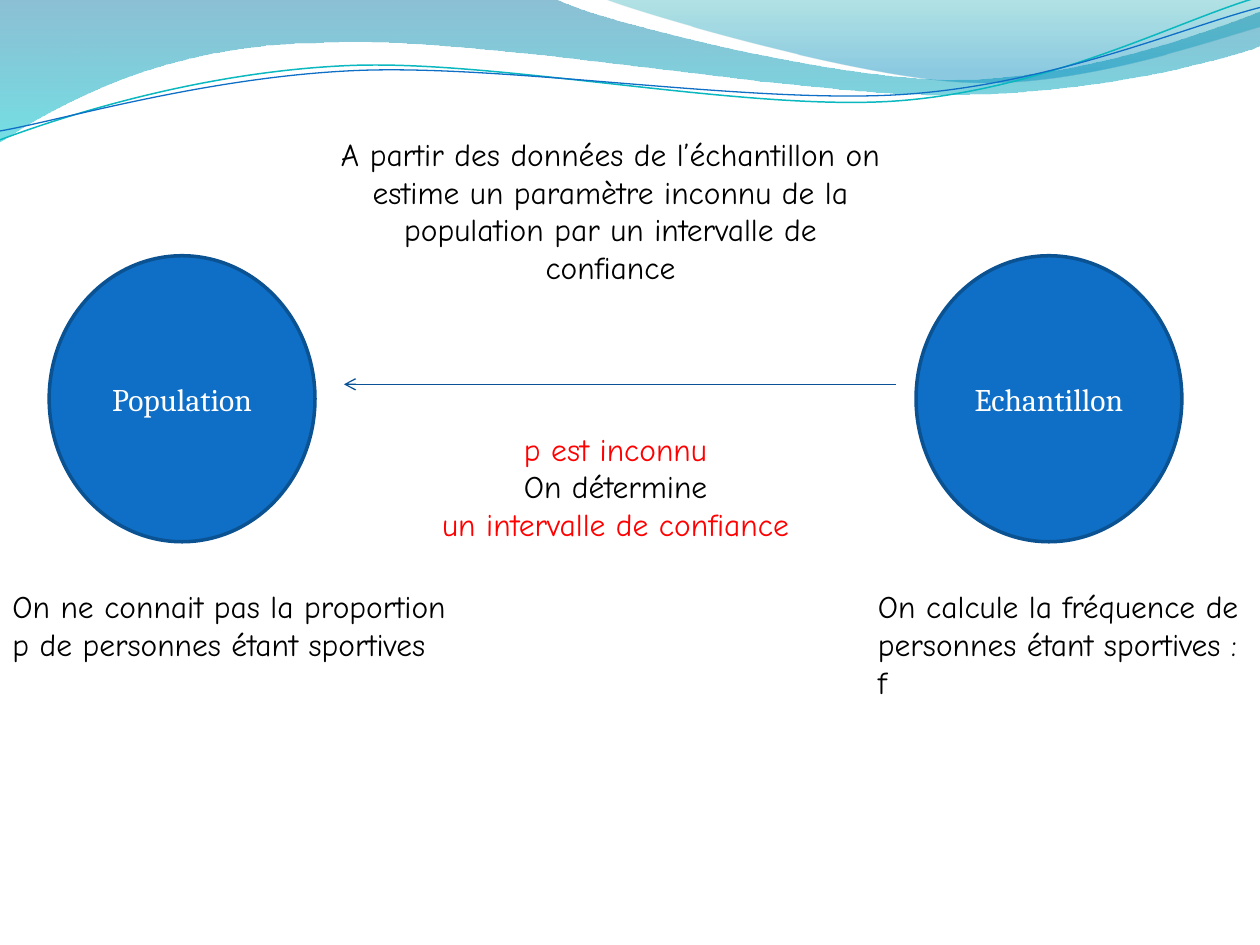
"""Build the slide on estimating a population proportion from a sample."""
from itertools import chain
from math import cos, radians, sin
from lxml.etree import SubElement
from pptx import Presentation
from pptx.dml.color import RGBColor
from pptx.enum.shapes import MSO_CONNECTOR, MSO_SHAPE
from pptx.enum.text import MSO_ANCHOR, MSO_AUTO_SIZE, PP_ALIGN
from pptx.oxml.ns import qn
from pptx.util import Inches, Pt

COLORS = {k: RGBColor.from_string(v) for k, v in {
    "blue": "0F6FC6", "outline": "0B5292", "arrow": "095295", "teal": "0AB8BF",
    "white": "FFFFFF", "black": "000000", "red": "FF0000",
    "wave_top": "0074A1", "wave_end": "00C6CF",
    "crest_top": "00A1A9", "crest_end": "008BBF"}.items()}


def add_wave(shapes, start, segments, close, tilt=0, center=(0, 0)):
    cx, cy = center
    c, n = cos(radians(tilt)), sin(radians(tilt))
    flat = list(chain(start, *segments))
    points = [(Inches(cx + (x - cx) * c + (y - cy) * n),
               Inches(cy - (x - cx) * n + (y - cy) * c))
              for x, y in zip(flat[::2], flat[1::2])]
    builder = shapes.build_freeform(*points[0])
    builder.add_line_segments(points[1:], close=close)
    sp = builder.convert_to_shape()
    sp.shadow.inherit = False
    sp.rotation = tilt
    steps = iter(list(sp._element.spPr.iter(qn("a:lnTo"))))
    for seg in segments:
        first = next(steps)
        if len(seg) == 6:
            first.tag = qn("a:cubicBezTo")
            for step in (next(steps), next(steps)):
                first.append(step[0])
                step.getparent().remove(step)
    return sp


def add_paragraph(tf, index, text, font, color, align):
    p = tf.paragraphs[0] if index == 0 else tf.add_paragraph()
    p.alignment = align
    r = p.add_run()
    r.text = text
    for name, value in {"name": font, "size": Pt(18)}.items():
        setattr(r.font, name, value)
    r.font.color.rgb = COLORS[color]


prs = Presentation()
prs.slide_width, prs.slide_height = Inches(10), Inches(7.5)
s = prs.slides.add_slide(prs.slide_layouts[6])

bands = [
    ((0, -0.01),
     [(4.4, -0.01), (4.76, 0.17, 6.64, 0.63, 7.58, 0.63),
      (8.53, 0.63, 9.58, 0.26, 10, 0.09), (10.01, 0.36),
      (9.83, 0.44, 8.7, 0.76, 7.46, 0.75), (6.22, 0.75, 3.82, 0.28, 2.57, 0.34),
      (1.29, 0.35, 0.46, 0.83, -0.01, 1.13), (0, -0.01)],
     [("wave_top", 0, 45), ("wave_end", 1, 55)]),
    ((4.79, -0.01),
     [(5.09, 0.11, 6.82, 0.62, 7.69, 0.65), (8.56, 0.69, 9.61, 0.32, 10, 0.21),
      (10, 0), (4.79, -0.01)],
     [("crest_top", 0, 30), ("crest_end", 0.8, 45)]),
]
for start, segments, stops in bands:
    sp = add_wave(s.shapes, start, segments, True)
    sp.line.fill.background()
    sp.fill.gradient()
    sp.fill.gradient_angle = 270
    for stop, (color, position, _) in zip(sp.fill.gradient_stops, stops):
        stop.color.rgb = COLORS[color]
        stop.position = position
    for clr, (_, _, opacity) in zip(sp._element.spPr.iter(qn("a:srgbClr")), stops):
        SubElement(clr, qn("a:alpha"), val=str(opacity * 1000))

strokes = [
    ((0, 1.11),
     [(0.48, 0.93, 1.58, 0.57, 2.77, 0.52), (3.95, 0.47, 5.93, 0.89, 7.13, 0.8),
      (8.33, 0.71, 9.38, 0.15, 9.98, -0.02)], (4.99, 0.58), "teal", 0.85),
    ((0, 1.04),
     [(0.47, 0.96, 1.64, 0.61, 2.83, 0.56), (4.03, 0.51, 5.97, 0.83, 7.17, 0.75),
      (8.36, 0.67, 9.41, 0.21, 10, 0.06)], (5, 0.59), "blue", 0.75),
]
for start, segments, center, color, width in strokes:
    sp = add_wave(s.shapes, start, segments, False, 357.3, center)
    sp.fill.background()
    sp.line.color.rgb = COLORS[color]
    sp.line.width = Pt(width)

for left, label in [(0.39, "Population"), (7.27, "Echantillon")]:
    sp = s.shapes.add_shape(MSO_SHAPE.OVAL, Inches(left), Inches(2.03),
                            Inches(2.11), Inches(2.27))
    sp.shadow.inherit = False
    sp.fill.solid()
    sp.fill.fore_color.rgb = COLORS["blue"]
    sp.line.color.rgb = COLORS["outline"]
    sp.line.width = Pt(2)
    sp.text_frame.vertical_anchor = MSO_ANCHOR.MIDDLE
    add_paragraph(sp.text_frame, 0, label, "Cambria", "white", PP_ALIGN.CENTER)

arrow = s.shapes.add_connector(MSO_CONNECTOR.STRAIGHT, Inches(7.11), Inches(3.05),
                               Inches(2.73), Inches(3.05))
arrow.line.color.rgb = COLORS["arrow"]
arrow.line.width = Pt(0.75)
SubElement(arrow.line._get_or_add_ln(), qn("a:tailEnd"), type="arrow")
SubElement(arrow._element.spPr, qn("a:effectLst"))

notes = [
    (3.36, 3.36, 3.05, 1.31, PP_ALIGN.CENTER,
     [("p est inconnu", "red"), ("On détermine", "black"),
      ("un intervalle de confiance", "red")]),
    (6.87, 4.61, 3.13, 1.01, PP_ALIGN.LEFT,
     [("On calcule la fréquence de personnes étant sportives : f", "black")]),
    (0, 4.61, 3.67, 1.01, PP_ALIGN.LEFT,
     [("On ne connait pas la proportion p de personnes étant sportives", "black")]),
    (2.58, 1.02, 4.53, 1.31, PP_ALIGN.CENTER,
     [("A partir des données de l’échantillon on estime un paramètre inconnu "
       "de la population par un intervalle de confiance", "black")]),
]
for left, top, width, height, align, lines in notes:
    tf = s.shapes.add_textbox(Inches(left), Inches(top), Inches(width),
                              Inches(height)).text_frame
    tf.word_wrap = True
    tf.auto_size = MSO_AUTO_SIZE.SHAPE_TO_FIT_TEXT
    for i, (text, color) in enumerate(lines):
        add_paragraph(tf, i, text, "Comic Neue", color, align)

prs.save("out.pptx")
